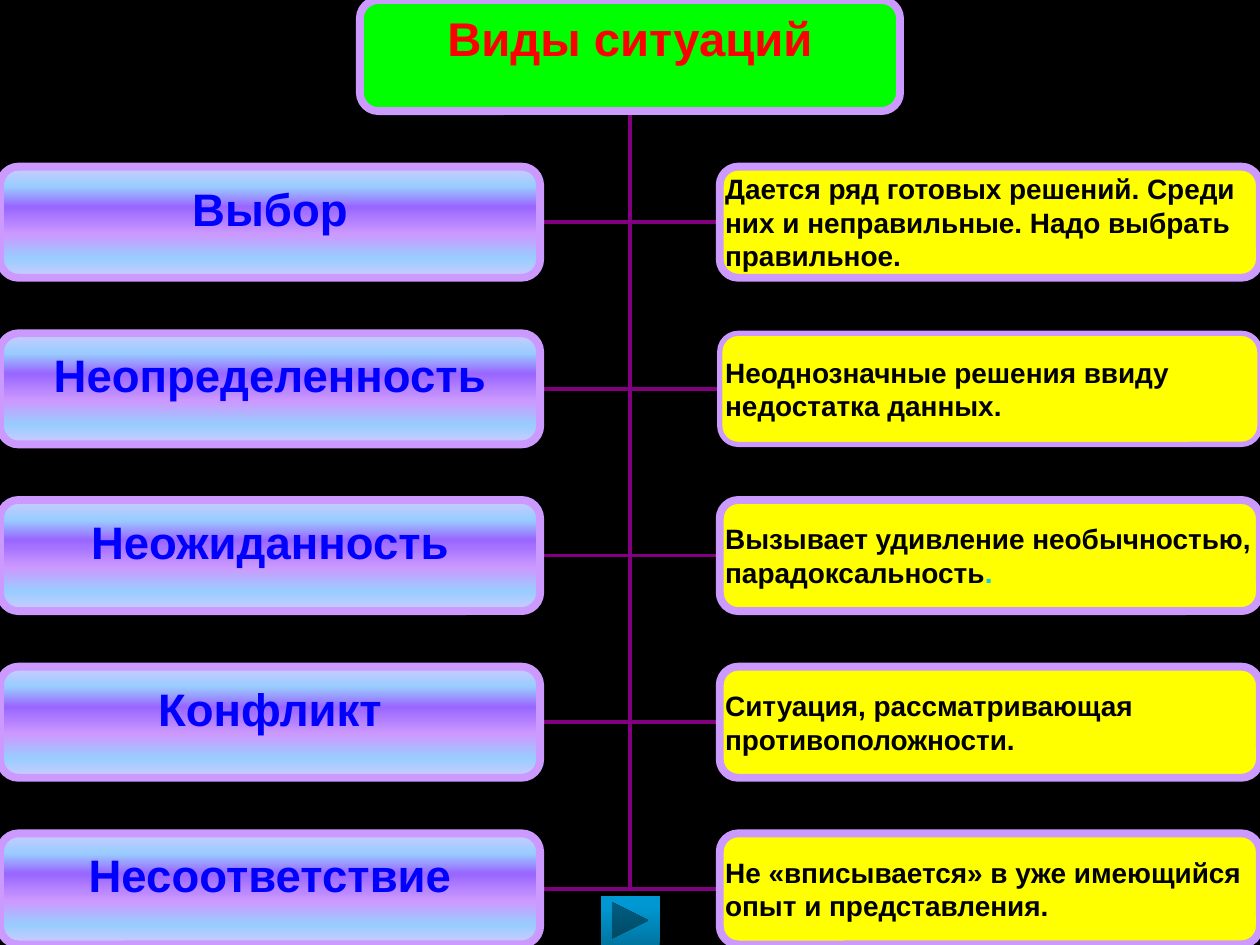
from lxml.etree import SubElement
from pptx import Presentation
from pptx.dml.color import RGBColor as RGB
from pptx.enum.shapes import MSO_CONNECTOR as LINK, MSO_SHAPE as FORM
from pptx.enum.text import MSO_ANCHOR as ANCHOR, PP_ALIGN as ALIGN
from pptx.oxml.ns import qn
from pptx.util import Cm, Pt

# Content: kind of situation, its description as (text, colour) runs
TITLE = "Виды ситуаций"
ROWS = [
    ("Выбор", [("Дается ряд готовых решений. Среди них и неправильные. "
                "Надо выбрать правильное.", "ink")]),
    ("Неопределенность", [("Неоднозначные решения ввиду недостатка данных.", "ink")]),
    ("Неожиданность", [("Вызывает удивление необычностью, парадоксальность", "ink"),
                       (".", "dot")]),
    ("Конфликт", [("Ситуация, рассматривающая противоположности.", "ink")]),
    ("Несоответствие", [("Не «вписывается» в уже имеющийся опыт и представления.", "ink")]),
]
THIN_ROW = 1  # description with the thinner border

THEME = {
    "font": "Arial",
    "back": "000000", "link": "800080", "edge": "CC99FF",
    "head": "00FF00", "title": "FF0000", "name": "0000FF",
    "note": "FFFF00", "ink": "000000", "dot": "00CCFF",
    "bands": [(0, "CCCCFF"), (18, "99CCFF"), (36, "9966FF"),
              (61, "CC99FF"), (82, "99CCFF"), (100, "CCCCFF")],
    "button": [(0, "0075A2"), (80, "0098D2"), (100, "0099D3")],
    "title_pt": 27, "name_pt": 26, "note_pt": 16,
    "edge_pt": 4.5, "thin_pt": 3, "link_pt": 2.25,
}

# Grid, in cm
WIDE, HIGH = 25.4, 19.05
BOX_W, BOX_H, STEP = 10.89, 2.24, 3.36
MID, RIGHT = WIDE / 2, WIDE - BOX_W
HEAD_X = MID - BOX_W / 2
BUTTON = (12.11, 18.06, 1.19, 0.99)


def color(key):
    return RGB.from_string(THEME[key])


def blend(shape, stops, angle):
    shape.fill.gradient()
    grad = shape._element.spPr.find(qn("a:gradFill"))
    for part in list(grad):
        grad.remove(part)
    group = SubElement(grad, qn("a:gsLst"))
    for pos, code in stops:
        stop = SubElement(group, qn("a:gs"), pos=str(pos * 1000))
        SubElement(stop, qn("a:srgbClr"), val=code)
    SubElement(grad, qn("a:lin"), ang=str(angle * 60000), scaled="0")


def add_box(x, y, fill=None, edge="edge_pt"):
    box = slide.shapes.add_shape(FORM.ROUNDED_RECTANGLE,
                                 Cm(x), Cm(y), Cm(BOX_W), Cm(BOX_H))
    box.shadow.inherit = False
    if fill:
        box.fill.solid()
        box.fill.fore_color.rgb = color(fill)
    else:
        blend(box, THEME["bands"], 90)
    box.line.color.rgb = color("edge")
    box.line.width = Pt(THEME[edge])
    return box


def write(shape, runs, size, align, anchor, top=0):
    frame = shape.text_frame
    frame.word_wrap = True
    frame.vertical_anchor = anchor
    frame.margin_left = frame.margin_right = frame.margin_bottom = 0
    frame.margin_top = Pt(top)
    para = frame.paragraphs[0]
    para.alignment = align
    para.font.name = THEME["font"]
    para.font.size = Pt(THEME[size])
    para.font.bold = True
    for text, key in runs:
        run = para.add_run()
        run.text = text
        run.font.color.rgb = color(key)


def add_link(x, y):
    link = slide.shapes.add_connector(LINK.ELBOW, Cm(x), Cm(y), Cm(MID), Cm(BOX_H))
    link.line.color.rgb = color("link")
    link.line.width = Pt(THEME["link_pt"])
    props = link._element.spPr
    props.find(qn("a:prstGeom")).set("prst", "bentConnector2")
    SubElement(props, qn("a:effectLst"))


deck = Presentation()
deck.slide_width, deck.slide_height = Cm(WIDE), Cm(HIGH)
slide = deck.slides.add_slide(deck.slide_layouts[5])
slide.background.fill.solid()
slide.background.fill.fore_color.rgb = color("back")

# Links from every box up to the heading
tops = [STEP * (i + 1) for i in range(len(ROWS))]
for top in reversed(tops):
    for x in (RIGHT, BOX_W):
        add_link(x, top + BOX_H / 2)

# Heading: rounded box with the title over it
add_box(HEAD_X, 0, "head")
title = slide.shapes.title
title.left, title.top, title.width, title.height = map(Cm, (HEAD_X, 0, BOX_W, BOX_H))
write(title, [(TITLE, "title")], "title_pt", ALIGN.CENTER, ANCHOR.TOP, 5)
slide.shapes._spTree.append(title._element)

# Rows: name on the left, description on the right
for i, (top, (name, note)) in enumerate(zip(tops, ROWS)):
    write(add_box(0, top), [(name, "name")], "name_pt", ALIGN.CENTER, ANCHOR.TOP, 5)
    edge = "thin_pt" if i == THIN_ROW else "edge_pt"
    write(add_box(RIGHT, top, "note", edge), note, "note_pt", ALIGN.LEFT, ANCHOR.MIDDLE)

# Forward button with a soft shadow
button = slide.shapes.add_shape(FORM.ACTION_BUTTON_FORWARD_OR_NEXT, *map(Cm, BUTTON))
blend(button, THEME["button"], 270)
button.line.fill.background()
button.shadow.inherit = False
effect = button._element.spPr.find(qn("a:effectLst"))
shade = SubElement(effect, qn("a:outerShdw"), blurRad=str(Pt(3.1)), dist=str(Pt(1.8)),
                   dir="5400000", rotWithShape="0")
tint = SubElement(shade, qn("a:srgbClr"), val=THEME["ink"])
SubElement(tint, qn("a:alpha"), val="35000")

deck.save("out.pptx")
